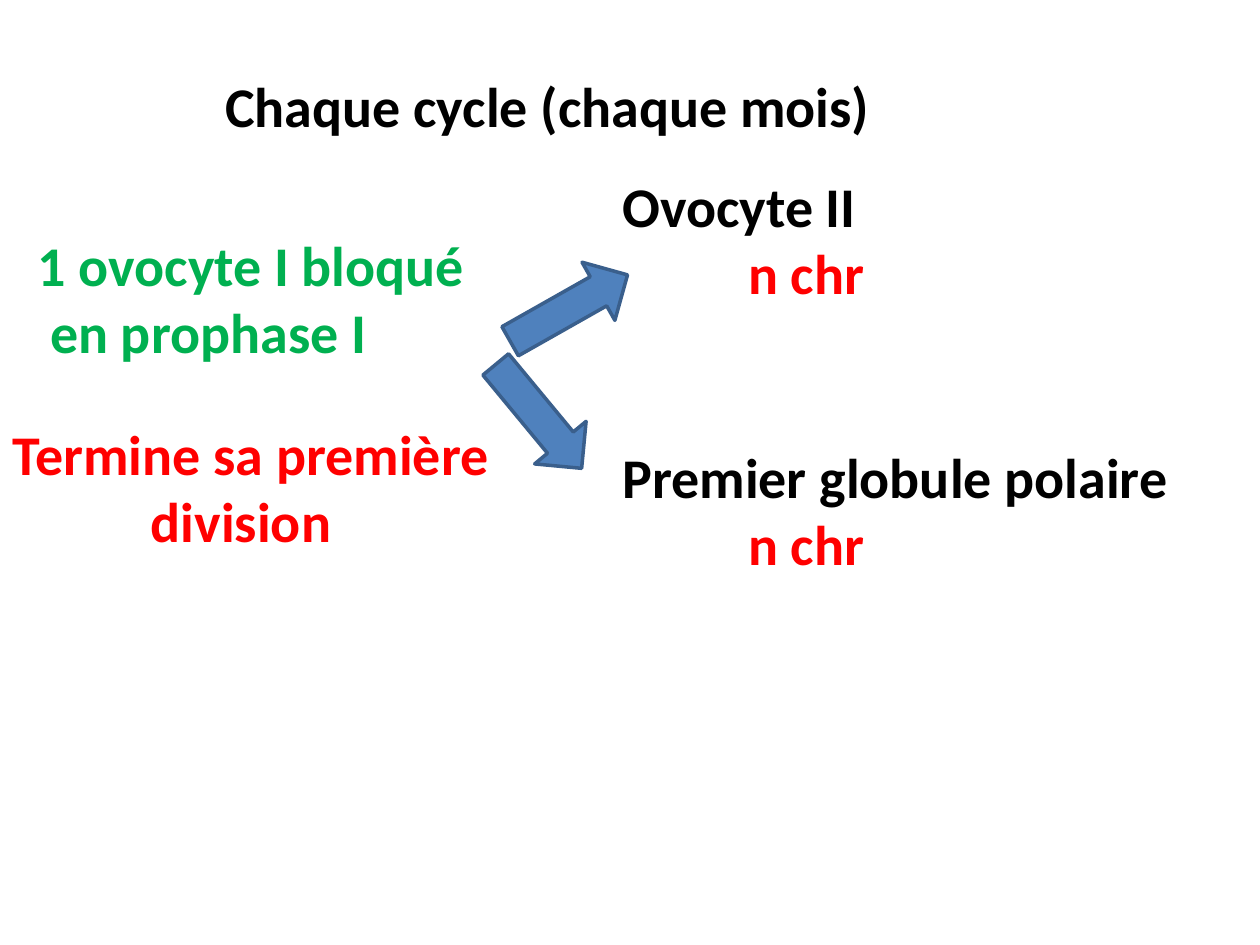
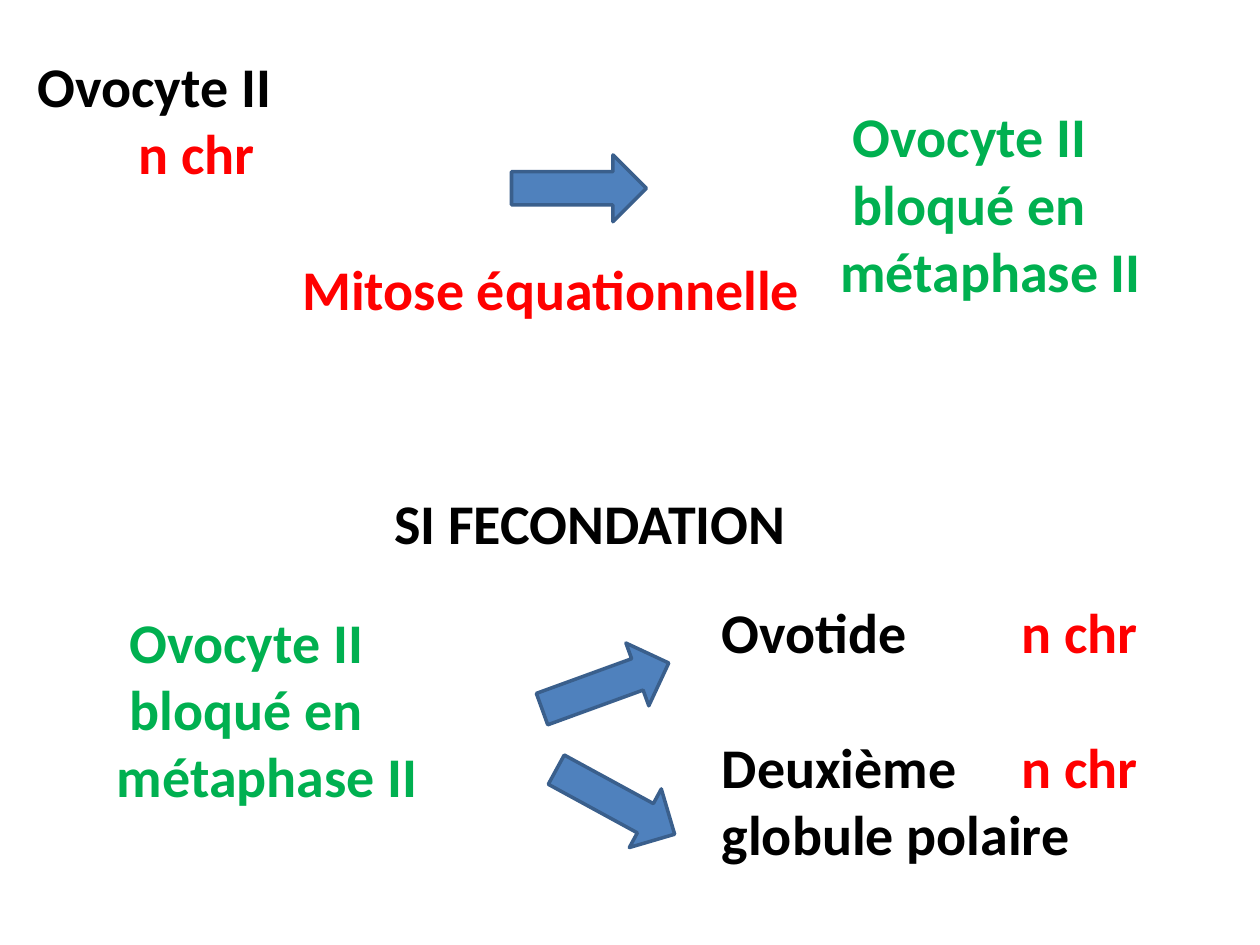
from lxml import etree
from pptx import Presentation
from pptx.dml.color import RGBColor
from pptx.enum import shapes, text
from pptx.oxml import ns
from pptx.util import Inches, Pt

BLACK = RGBColor(0x00, 0x00, 0x00)
RED = RGBColor(0xFF, 0x00, 0x00)
GREEN = RGBColor(0x00, 0xB0, 0x50)
BLUE = RGBColor(0x4F, 0x81, 0xBD)
DARK_BLUE = RGBColor(0x3A, 0x5F, 0x8C)
FONT = "Calibri"
FONT_SIZE = 32
LINE_HEIGHT = 39  # points
TAB_POSITION = 2.38  # inches, column of the chromosome counts


def add_text(slide, left, top, width, height, lines):
    """Each line is (wording, colour, indent in inches, empty lines before).

    Wording after a tab is set in red at the tab stop."""
    box = slide.shapes.add_textbox(Inches(left), Inches(top), Inches(width), Inches(height))
    frame = box.text_frame
    frame.word_wrap = True
    frame.auto_size = text.MSO_AUTO_SIZE.NONE
    for number, (wording, colour, indent, gap) in enumerate(lines):
        paragraph = frame.paragraphs[0] if number == 0 else frame.add_paragraph()
        paragraph.font.name = FONT
        paragraph.font.size = Pt(FONT_SIZE)
        paragraph.font.bold = True
        paragraph.font.color.rgb = colour
        paragraph.space_before = Pt(gap * LINE_HEIGHT)
        properties = paragraph._p.get_or_add_pPr()
        properties.set("marL", str(Inches(indent)))
        label, tab, count = wording.partition("\t")
        runs = [(label, colour)]
        if tab:
            runs.append((tab + count, RED))
            tab_list = etree.Element(ns.qn("a:tabLst"))
            etree.SubElement(tab_list, ns.qn("a:tab"), pos=str(Inches(TAB_POSITION)), algn="l")
            properties.find(ns.qn("a:defRPr")).addprevious(tab_list)
        for words, run_colour in runs:
            run = paragraph.add_run()
            run.text = words
            run.font.name = FONT
            run.font.size = Pt(FONT_SIZE)
            run.font.bold = True
            run.font.color.rgb = run_colour


def add_arrow(slide, left, top, rotation):
    arrow = slide.shapes.add_shape(
        shapes.MSO_SHAPE.RIGHT_ARROW, Inches(left), Inches(top), Inches(1.07), Inches(0.53))
    arrow.rotation = rotation
    arrow.shadow.inherit = False
    arrow.fill.solid()
    arrow.fill.fore_color.rgb = BLUE
    arrow.line.color.rgb = DARK_BLUE
    arrow.line.width = Pt(2)


presentation = Presentation()
presentation.slide_width = Inches(10)
presentation.slide_height = Inches(7.5)
blank_layout = presentation.slide_layouts[6]

# Slide 1: first division, once per cycle
slide = presentation.slides.add_slide(blank_layout)
add_text(slide, 1.69, 0.52, 5.6, 0.64, [("Chaque cycle (chaque mois)", BLACK, 0, 0)])
add_text(slide, 0.2, 1.78, 4.33, 1.72, [
    ("1 ovocyte I bloqué", GREEN, 0, 0),
    ("en prophase I", GREEN, 0.1, 0),
])
add_text(slide, 4.84, 1.31, 5.1, 3.33, [
    ("Ovocyte II", BLACK, 0, 0),
    ("n chr", RED, 1, 0),
    ("Premier globule polaire", BLACK, 0, 2),
    ("n chr", RED, 1, 0),
])
add_text(slide, 0, 3.28, 4.2, 1.18, [
    ("Termine sa première", RED, 0, 0),
    ("division", RED, 1.1, 0),
])
add_arrow(slide, 3.74, 3.04, 50.4)
add_arrow(slide, 3.98, 2.18, 330.5)

# Slide 2: second division, completed after fertilisation
slide = presentation.slides.add_slide(blank_layout)
add_text(slide, 0.2, 0.36, 8.26, 2.26, [
    ("Ovocyte II", BLACK, 0, 0),
    ("n chr", RED, 0.8, 0),
    ("Mitose équationnelle", RED, 2.1, 1),
])
add_arrow(slide, 4.06, 1.23, 0)
add_text(slide, 3.03, 3.83, 3.5, 1.72, [("SI FECONDATION", BLACK, 0, 0)])
add_text(slide, 5.63, 4.69, 4.3, 2.26, [
    ("Ovotide\tn chr", BLACK, 0, 0),
    ("Deuxième\tn chr", BLACK, 0, 1),
    ("globule polaire", BLACK, 0, 0),
])
add_arrow(slide, 4.35, 6.1, 28.6)
add_arrow(slide, 4.27, 5.18, 340)

# The blocked oocyte: result of the first step, start of the second
for left, top in [(6.57, 0.76), (0.83, 4.77)]:
    add_text(slide, left, top, 2.8, 1.72, [
        ("Ovocyte II", GREEN, 0.1, 0),
        ("bloqué en", GREEN, 0.1, 0),
        ("métaphase II", GREEN, 0, 0),
    ])

presentation.save("out.pptx")
